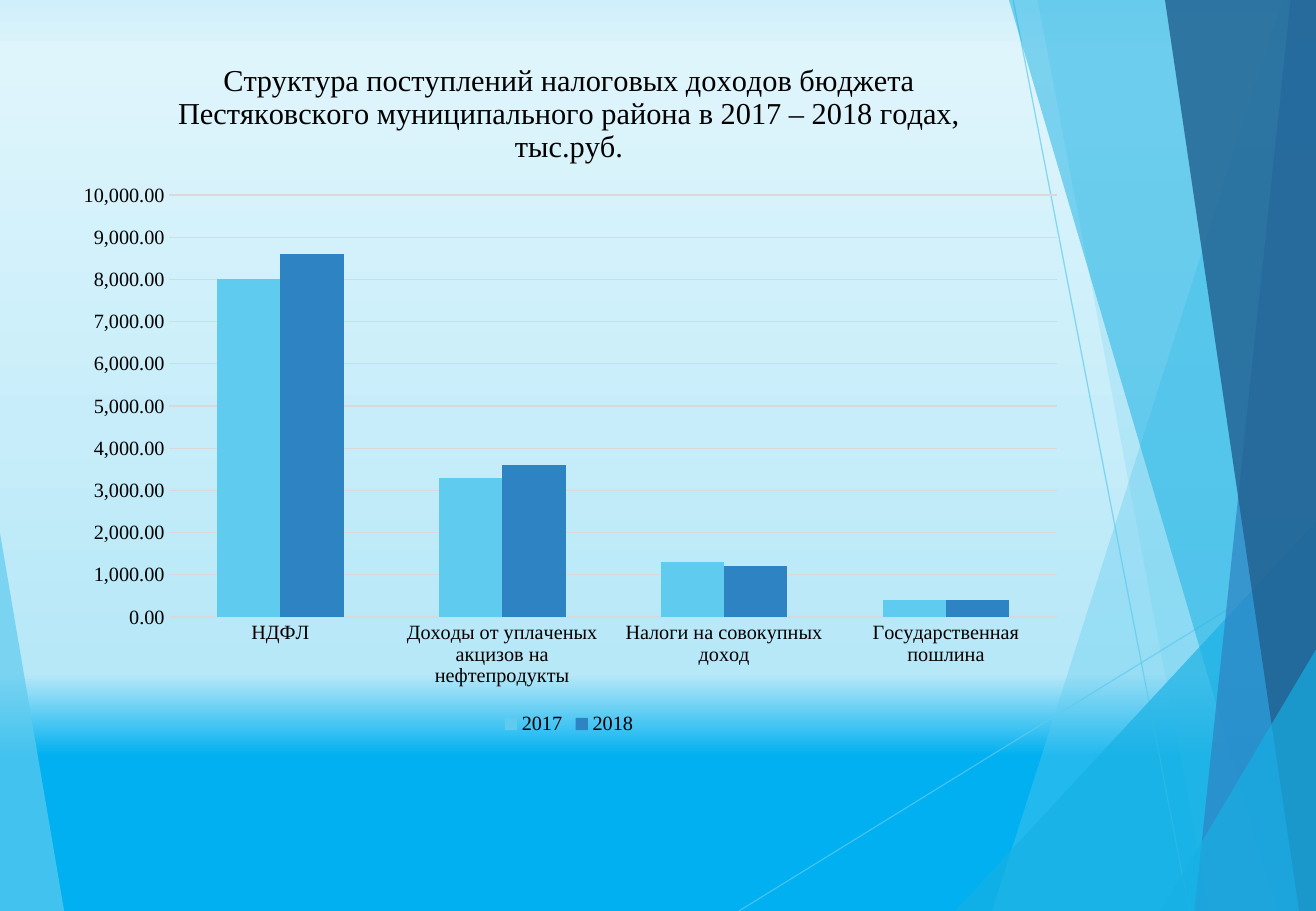
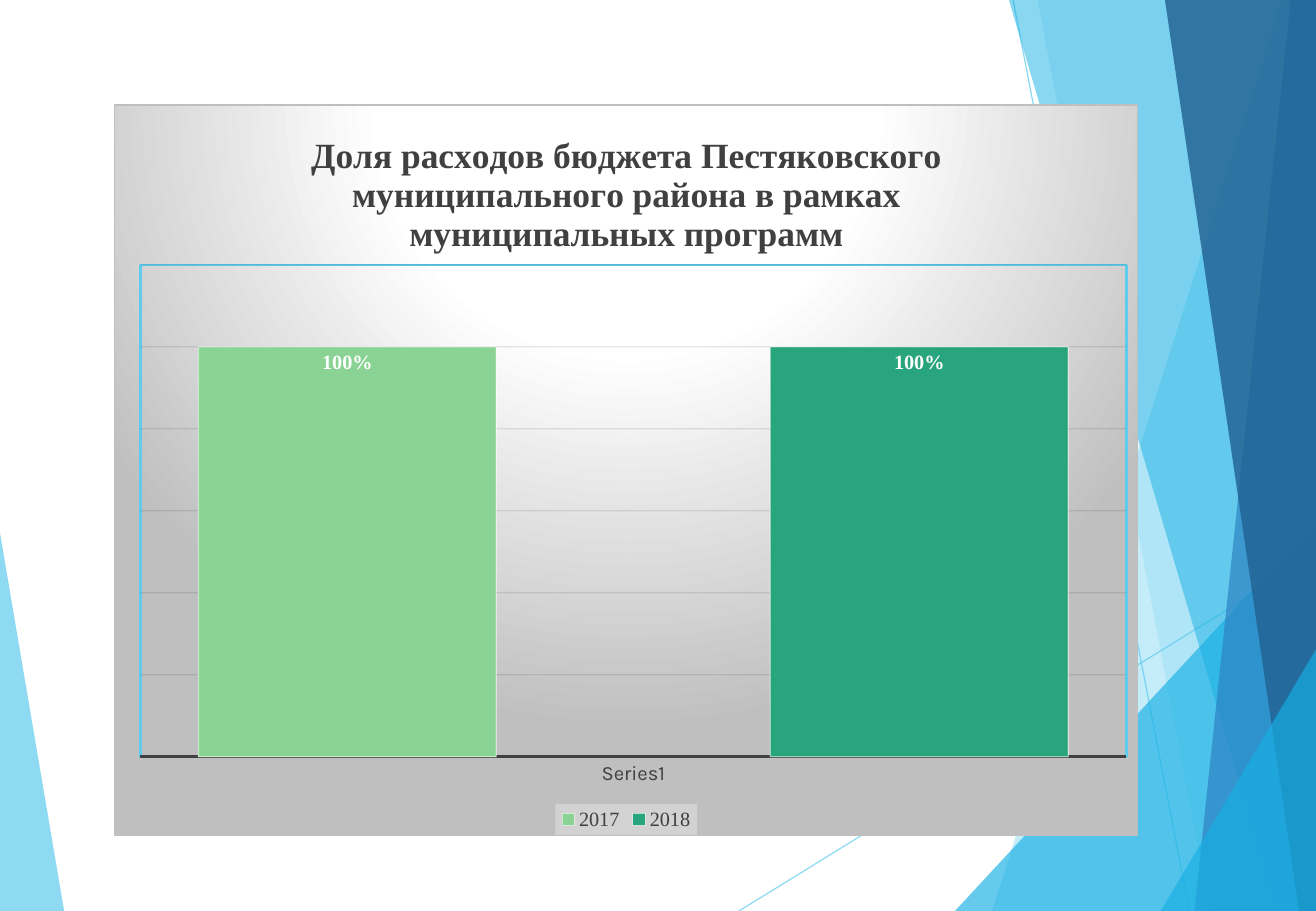
"""Build two budget chart slides over one shared faceted layout."""
from lxml import etree
from pptx import Presentation
from pptx.chart.data import CategoryChartData
from pptx.dml.color import RGBColor
from pptx.enum.chart import XL_CHART_TYPE, XL_LABEL_POSITION, XL_LEGEND_POSITION, XL_TICK_MARK
from pptx.enum.shapes import MSO_CONNECTOR
from pptx.oxml import parse_xml
from pptx.oxml.ns import nsdecls, qn
from pptx.util import Pt

COLUMN = XL_CHART_TYPE.COLUMN_CLUSTERED
BOTTOM = XL_LEGEND_POSITION.BOTTOM
INSIDE = XL_LABEL_POSITION.INSIDE_END
NONE = XL_TICK_MARK.NONE
STRAIGHT = MSO_CONNECTOR.STRAIGHT

SKY = RGBColor(0x5F, 0xCB, 0xEF)
CYAN = RGBColor(0x17, 0xB0, 0xE4)
BLUE = RGBColor(0x2E, 0x83, 0xC3)
NAVY = RGBColor(0x22, 0x62, 0x92)
MINT = RGBColor(0x8A, 0xD3, 0x94)
GREEN = RGBColor(0x29, 0xA5, 0x7D)
WHITE = RGBColor(0xFF, 0xFF, 0xFF)
BLACK = RGBColor(0, 0, 0)
DARK = RGBColor(0x40, 0x40, 0x40)
INK = RGBColor(0x0D, 0x0D, 0x0D)
PALE = RGBColor(0xD9, 0xD9, 0xD9)
GREY = RGBColor(0xBF, 0xBF, 0xBF)
FROST = RGBColor(0xF2, 0xF2, 0xF2)
ICE = RGBColor(0xCF, 0xEF, 0xFA)
MIST = RGBColor(0xDF, 0xF5, 0xFC)
HAZE = RGBColor(0xB7, 0xE8, 0xF8)
AZURE = RGBColor(0x00, 0xB0, 0xF0)

SERIF, SANS = "Times New Roman", "Karla"
WIDE, HIGH = 780, 540


def band(top, foot):
    return [(top, 0), (foot, HIGH), (WIDE, HIGH), (WIDE, 0)]


def wedge(left, top):
    return [(left, HIGH), (WIDE, top), (WIDE, HIGH)]


RAYS = [((438, HIGH), (WIDE, 329)), ((600.5, 0), (705, HIGH))]
FACETS = [
    ([(0, 316), (38, HIGH), (0, HIGH)], SKY, 70),
    (band(760, 588), SKY, 36),
    (band(615, 717), SKY, 20),
    (wedge(566, 309), CYAN, 66),
    (band(598, 757), CYAN, 50),
    (band(765, 708), BLUE, 70),
    (band(690.5, 770), NAVY, 82),
    (wedge(688, 385), CYAN, 66),
]
SKIES = [(0, ICE), (6, MIST), (74, HAZE), (83, AZURE)]
GLOW = [(0, WHITE), (39, WHITE), (100, GREY)]
DOWN = '<a:lin ang="5400000" scaled="0"/>'
ROUND = '<a:path path="circle"><a:fillToRect l="50000" t="-80000" r="50000" b="180000"/></a:path>'

TAXES = {
    "title": "Структура поступлений налоговых доходов бюджета Пестяковского "
             "муниципального района в 2017 – 2018 годах, тыс.руб.",
    "size": 18, "bold": False, "color": BLACK, "font": SERIF,
    "box": (36.7, 20.9, 601.2, 417.6), "plot": (0.106, 0.227, 0.875, 0.599),
    "cats": ["НДФЛ", "Доходы от уплаченых акцизов на нефтепродукты",
             "Налоги на совокупных доход", "Государственная пошлина"],
    "rows": [("2017", [8000, 3300, 1300, 400], SKY),
             ("2018", [8600, 3600, 1200, 400], BLUE)],
    "gap": 150, "lap": 0, "max": 10000, "step": 1000, "form": "#,##0.00", "grid": PALE,
}
SHARE = {
    "title": "Доля расходов бюджета Пестяковского муниципального района "
             "в рамках муниципальных программ",
    "size": 21, "bold": True, "color": DARK, "font": SANS,
    "box": (67.7, 61.9, 607, 433.4), "plot": (0.025, 0.219, 0.964, 0.674),
    "cats": ["Series1"],
    "rows": [("2017", [1], MINT), ("2018", [1], GREEN)],
    "gap": 39, "lap": -92, "max": 1.2, "step": 0.2, "form": "0%", "grid": INK,
}


def fade(node, part):
    for tint in node.iter(qn("a:srgbClr")):
        etree.SubElement(tint, qn("a:alpha")).set("val", str(part * 1000))


def blend(stops, shade):
    marks = "".join(f'<a:gs pos="{pos * 1000}"><a:srgbClr val="{tint}"/></a:gs>'
                    for pos, tint in stops)
    return f'<a:gradFill {nsdecls("a")} rotWithShape="1"><a:gsLst>{marks}</a:gsLst>{shade}</a:gradFill>'


def solid(tint):
    return f'<a:solidFill><a:srgbClr val="{tint}"/></a:solidFill>'


def edge(tint, width):
    return f'<a:ln w="{Pt(width)}">{solid(tint)}</a:ln>'


def style(body):
    return parse_xml(f'<c:spPr {nsdecls("c", "a")}>{body}</c:spPr>')


def type_in(font, name, size, color, bold=False):
    font.name, font.size, font.bold = name, Pt(size), bold
    font.color.rgb = color


def stroke(line, color, width):
    line.color.rgb = color
    line.width = Pt(width)


def facet(group, dots, color, part):
    dots = [(Pt(x), Pt(y)) for x, y in dots]
    pen = group.shapes.build_freeform(*dots[0])
    pen.add_line_segments(dots[1:], close=True)
    shape = pen.convert_to_shape()
    shape.shadow.inherit = False
    shape.fill.solid()
    shape.fill.fore_color.rgb = color
    shape.line.fill.background()
    fade(shape._element.spPr, part)


def ray(group, start, end):
    line = group.shapes.add_connector(STRAIGHT, *(Pt(v) for v in start + end))
    stroke(line.line, SKY, 0.75)
    props = line._element.spPr
    fade(props, 70)
    etree.SubElement(props, qn("a:effectLst"))


def dress(slide, layout):
    group = slide.shapes.add_group_shape()
    facet(group, *FACETS[0])
    for start, end in RAYS:
        ray(group, start, end)
    for item in FACETS[1:]:
        facet(group, *item)
    layout.shapes._spTree.append(group._element)


def place(area, plot):
    old = area.find(qn("c:layout"))
    if old is not None:
        area.remove(old)
    sides = "".join(f'<c:{tag} val="{val}"/>' for tag, val in zip("xywh", plot))
    area.insert(0, parse_xml(
        f'<c:layout {nsdecls("c")}><c:manualLayout><c:layoutTarget val="inner"/>'
        f'<c:xMode val="edge"/><c:yMode val="edge"/>{sides}</c:manualLayout></c:layout>'))


def draw(slide, spec):
    data = CategoryChartData(number_format=spec["form"])
    data.categories = spec["cats"]
    for name, vals, _ in spec["rows"]:
        data.add_series(name, vals)
    box = [Pt(v) for v in spec["box"]]
    chart = slide.shapes.add_chart(COLUMN, *box, data).chart
    color = spec["color"]
    type_in(chart.font, spec["font"], 10, BLACK)

    chart.has_title = True
    run = chart.chart_title.text_frame.paragraphs[0].add_run()
    run.text = spec["title"]
    type_in(run.font, SERIF, spec["size"], color, spec["bold"])
    chart.chart_title.include_in_layout = False

    chart.has_legend = True
    chart.legend.position = BOTTOM
    chart.legend.include_in_layout = False
    type_in(chart.legend.font, SERIF, 12, color)

    cat, val = chart.category_axis, chart.value_axis
    for axis in (cat, val):
        axis.major_tick_mark = axis.minor_tick_mark = NONE
        axis.format.line.fill.background()
        type_in(axis.tick_labels.font, spec["font"], 12, color)
    val.minimum_scale, val.maximum_scale = 0, spec["max"]
    val.major_unit = spec["step"]
    val.tick_labels.number_format = spec["form"]
    val.tick_labels.number_format_is_linked = False
    stroke(val.major_gridlines.format.line, spec["grid"], 0.75)

    bars = chart.plots[0]
    bars.vary_by_categories = False
    bars.gap_width, bars.overlap = spec["gap"], spec["lap"]
    for row, (_, _, tint) in zip(bars.series, spec["rows"]):
        row.format.fill.solid()
        row.format.fill.fore_color.rgb = tint
    place(chart._chartSpace.chart.plotArea, spec["plot"])
    return chart


def frame(chart):
    space = chart._chartSpace
    space.chart.addnext(style(blend(GLOW, ROUND) + edge(GREY, 0.75)))
    space.chart.plotArea.append(style("<a:noFill/>" + edge(SKY, 1.5)))
    panel = style(solid(FROST))
    fade(panel, 39)
    chart.legend._element.find(qn("c:overlay")).addnext(panel)
    chart.value_axis.visible = False
    fade(chart.value_axis._element.find(qn("c:majorGridlines")), 10)
    stroke(chart.category_axis.format.line, DARK, 1.5)
    for row in chart.plots[0].series:
        stroke(row.format.line, WHITE, 0.75)
        fade(row._element.find(".//" + qn("a:ln")), 50)
        tags = row.data_labels
        tags.show_value = True
        tags.position = INSIDE
        tags.number_format, tags.number_format_is_linked = "0%", False
        type_in(tags.font, SERIF, 12, WHITE, True)


def main():
    deck = Presentation()
    deck.slide_width, deck.slide_height = Pt(WIDE), Pt(HIGH)
    layout = deck.slide_layouts[6]
    first, second = (deck.slides.add_slide(layout) for _ in range(2))
    dress(first, layout)

    first.background.fill.gradient()
    old = first._element.find(".//" + qn("a:gradFill"))
    old.getparent().replace(old, parse_xml(blend(SKIES, DOWN)))
    draw(first, TAXES)
    frame(draw(second, SHARE))
    deck.save("out.pptx")


if __name__ == "__main__":
    main()
